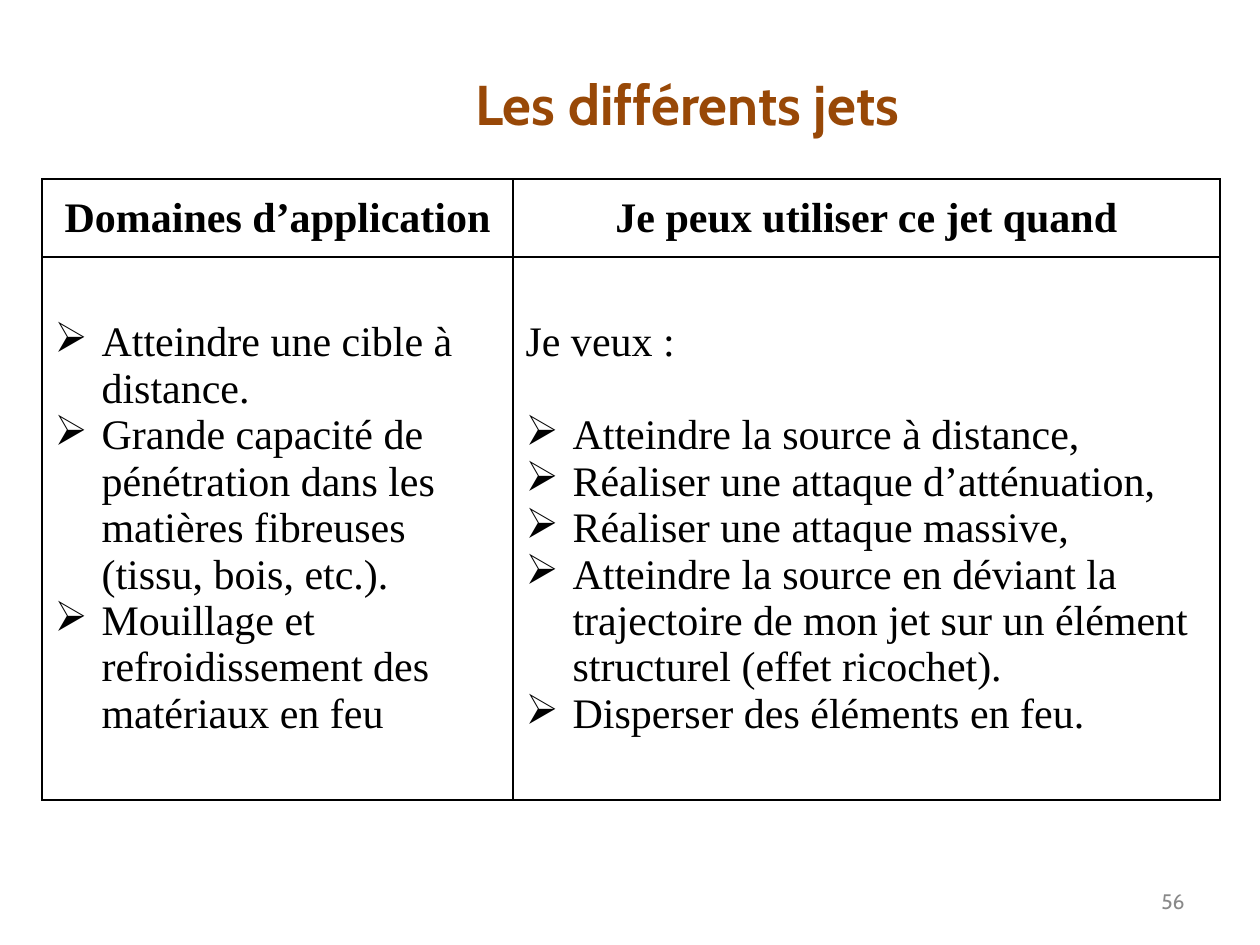
import pptx
import pptx.dml.color
import pptx.enum.text
import pptx.util
from dataclasses import dataclass
from lxml import etree
from pptx.oxml.ns import qn

# Content
TITLE = "Les différents jets"
PAGE_NUMBER = "56"
HEADERS = ["Domaines d’application", "Je peux utiliser ce jet quand"]
APPLICATIONS = [
    "Atteindre une cible à distance.",
    "Grande capacité de pénétration dans les matières fibreuses (tissu, bois, etc.).",
    "Mouillage et refroidissement des matériaux en feu",
]
USES_INTRO = "Je veux :"
USES = [
    "Atteindre la source à distance,",
    "Réaliser une attaque d’atténuation,",
    "Réaliser une attaque massive,",
    "Atteindre la source en déviant la trajectoire de mon jet sur un élément "
    "structurel (effet ricochet).",
    "Disperser des éléments en feu.",
]

# Layout in px
SLIDE_SIZE = (1260, 945)
TITLE_BOX = (154, 38, 1067, 130)
NUMBER_BOX = (903, 876, 294, 50)
TABLE_ORIGIN = (42, 179)
COLUMN_WIDTHS = (471, 707)
ROW_HEIGHTS = (78, 543)
BULLET_INDENT = 47

ALIGN = pptx.enum.text.PP_ALIGN
MIDDLE = pptx.enum.text.MSO_ANCHOR.MIDDLE


@dataclass(frozen=True)
class Theme:
    title_font: str = "Cabin"
    body_font: str = "Times New Roman"
    title_color: str = "984807"
    body_color: str = "000000"
    number_color: str = "898989"
    title_size: int = 32
    body_size: int = 24
    number_size: int = 12
    border_width: int = 1
    intro_gap: float = 26.5


THEME = Theme()


def px(length):
    return pptx.util.Emu(round(length * 914400 / 126))


def style(paragraph, name, size, color, bold=False, align=ALIGN.LEFT):
    paragraph.alignment = align
    paragraph.font.name = name
    paragraph.font.size = pptx.util.Pt(size)
    paragraph.font.bold = bold
    paragraph.font.color.rgb = pptx.dml.color.RGBColor.from_string(color)


def add_bullet(paragraph):
    properties = paragraph._p.get_or_add_pPr()
    properties.set("marL", str(px(BULLET_INDENT)))
    properties.set("indent", str(-px(BULLET_INDENT)))
    etree.SubElement(properties, qn("a:buChar"), char="➢")


def add_borders(cell):
    properties = cell._tc.get_or_add_tcPr()
    for side in ("lnL", "lnR", "lnT", "lnB"):
        line = etree.SubElement(properties, qn(f"a:{side}"),
                                w=str(pptx.util.Pt(THEME.border_width)))
        fill = etree.SubElement(line, qn("a:solidFill"))
        etree.SubElement(fill, qn("a:srgbClr"), val=THEME.body_color)


def fill_cell(cell, items, intro=None, header=False):
    cell.vertical_anchor = MIDDLE
    add_borders(cell)
    cell.fill.background()
    lines = ([intro] if intro else []) + items
    cell.text_frame.text = "\n".join(lines)
    for index, paragraph in enumerate(cell.text_frame.paragraphs):
        if not header and lines[index] != intro:
            add_bullet(paragraph)
        if intro and index == 1:
            paragraph.space_before = pptx.util.Pt(THEME.intro_gap)
        style(paragraph, THEME.body_font, THEME.body_size, THEME.body_color,
              header, ALIGN.CENTER if header else ALIGN.LEFT)


def main():
    presentation = pptx.Presentation()
    presentation.slide_width, presentation.slide_height = map(px, SLIDE_SIZE)
    slide = presentation.slides.add_slide(presentation.slide_layouts[5])

    # Title
    title = slide.shapes.title
    title.left, title.top, title.width, title.height = map(px, TITLE_BOX)
    title.text_frame.text = TITLE
    title.text_frame.vertical_anchor = MIDDLE
    style(title.text_frame.paragraphs[0], THEME.title_font, THEME.title_size,
          THEME.title_color, True, ALIGN.CENTER)

    # Table
    table = slide.shapes.add_table(
        len(ROW_HEIGHTS), len(COLUMN_WIDTHS), *map(px, TABLE_ORIGIN),
        px(sum(COLUMN_WIDTHS)), px(sum(ROW_HEIGHTS))).table
    table.first_row = table.horz_banding = False
    for column, width in zip(table.columns, COLUMN_WIDTHS):
        column.width = px(width)
    for row, height in zip(table.rows, ROW_HEIGHTS):
        row.height = px(height)
    for index, header in enumerate(HEADERS):
        fill_cell(table.cell(0, index), [header], header=True)
    fill_cell(table.cell(1, 0), APPLICATIONS)
    fill_cell(table.cell(1, 1), USES, intro=USES_INTRO)

    # Page number
    number = slide.shapes.add_textbox(*map(px, NUMBER_BOX)).text_frame
    number.word_wrap = True
    number.vertical_anchor = MIDDLE
    number.text = PAGE_NUMBER
    style(number.paragraphs[0], THEME.title_font, THEME.number_size,
          THEME.number_color, align=ALIGN.RIGHT)

    presentation.save("out.pptx")


if __name__ == "__main__":
    main()
